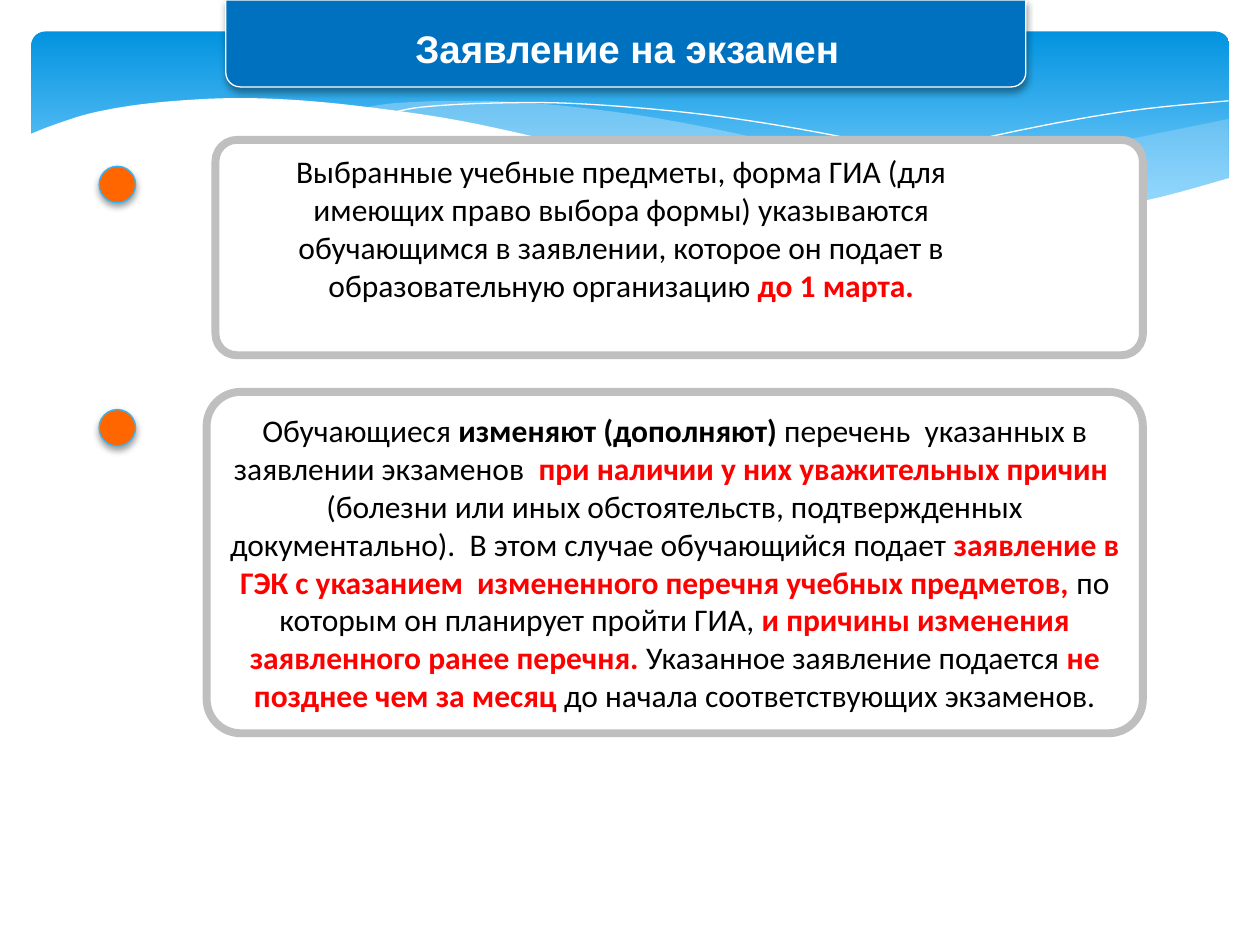
from dataclasses import dataclass

from lxml import etree
from pptx import Presentation
from pptx.dml.color import RGBColor
from pptx.enum import shapes as sh, text as tx
from pptx.oxml import ns
from pptx.util import Pt

WHITE = RGBColor(0xFF, 0xFF, 0xFF)
BLACK = RGBColor(0, 0, 0)
RED = RGBColor(0xFF, 0, 0)
GREY = RGBColor(0xBF, 0xBF, 0xBF)
BLUE = RGBColor(0x00, 0x71, 0xBF)
DEEP = RGBColor(0x02, 0x93, 0xE0)
LIGHT = RGBColor(0x83, 0xD3, 0xFE)
MIST = RGBColor(0xC6, 0xE7, 0xFC)
SKY = RGBColor(0x31, 0xB6, 0xFD)
ORANGE = RGBColor(0xFF, 0x66, 0x00)
KIND = sh.MSO_SHAPE
STEPS = 6


@dataclass
class Box:
    kind: int
    left: float
    top: float
    width: float
    height: float
    fill: RGBColor
    edge: RGBColor | None = None
    weight: float = 0
    round: float | None = None
    shade: bool = False


@dataclass
class Wave:
    curves: list
    fill: RGBColor | None = None
    alpha: int = 100


@dataclass
class Part:
    words: str
    color: RGBColor = BLACK
    bold: bool = False


def add_node(parent, tag: str, **attrs):
    return etree.SubElement(parent, ns.qn(tag), attrs)


def add_shade(shape) -> None:
    effects = shape._element.spPr.find(ns.qn("a:effectLst"))
    outer = add_node(effects, "a:outerShdw", blurRad=str(Pt(4)), dist=str(Pt(2)),
                     dir="5400000", rotWithShape="0")
    add_node(add_node(outer, "a:srgbClr", val=str(BLACK)), "a:alpha", val="38000")


def add_box(slide, box: Box):
    shape = slide.shapes.add_shape(box.kind, Pt(box.left), Pt(box.top),
                                   Pt(box.width), Pt(box.height))
    shape.shadow.inherit = False
    shape.fill.solid()
    shape.fill.fore_color.rgb = box.fill
    if box.edge is None:
        shape.line.fill.background()
    else:
        shape.line.color.rgb = box.edge
        shape.line.width = Pt(box.weight)
    if box.round is not None:
        shape.adjustments[0] = box.round
    if box.shade:
        add_shade(shape)
    return shape


def smooth(knots: list) -> list:
    ends = [knots[0], *knots, knots[-1]]
    dots = []
    for a, b, c, d in zip(ends, ends[1:], ends[2:], ends[3:]):
        for step in range(STEPS):
            t = step / STEPS
            dots.append(tuple(Pt(0.5 * (2 * q + (r - p) * t
                                        + (2 * p - 5 * q + 4 * r - s) * t ** 2
                                        + (3 * q - p - 3 * r + s) * t ** 3))
                              for p, q, r, s in zip(a, b, c, d)))
    return dots + [tuple(Pt(v) for v in knots[-1])]


def add_wave(slide, wave: Wave) -> None:
    dots = [dot for curve in wave.curves for dot in smooth(curve)]
    form = slide.shapes.build_freeform(*dots[0])
    form.add_line_segments(dots[1:], close=wave.fill is not None)
    shape = form.convert_to_shape()
    shape.shadow.inherit = False
    if wave.fill is None:
        shape.fill.background()
        shape.line.color.rgb = WHITE
        shape.line.width = Pt(0)
        return
    shape.line.fill.background()
    shape.fill.solid()
    shape.fill.fore_color.rgb = wave.fill
    if wave.alpha < 100:
        tint = shape._element.spPr.find(ns.qn("a:solidFill"))[0]
        add_node(tint, "a:alpha", val=str(wave.alpha * 1000))


def add_words(shape, parts: list[Part], size: float, face: str) -> None:
    frame = shape.text_frame
    frame.word_wrap = True
    para = frame.paragraphs[0]
    para.alignment = tx.PP_ALIGN.CENTER
    for part in parts:
        run = para.add_run()
        run.text = part.words
        run.font.color.rgb = part.color
        for key, val in {"size": Pt(size), "name": face, "bold": part.bold}.items():
            setattr(run.font, key, val)


def add_label(slide, left: float, top: float, width: float, height: float,
              parts: list[Part], size: float, face: str) -> None:
    label = slide.shapes.add_textbox(Pt(left), Pt(top), Pt(width), Pt(height))
    add_words(label, parts, size, face)


WAVES = [
    Wave([[(702, 68), (658, 77), (620, 85), (561, 98.6), (476, 115)],
          [(476, 115), (527, 120), (571, 123.5), (616, 123), (657, 116), (702, 102)]],
         MIST, 29),
    Wave([[(643, 120.2), (581, 111), (508, 96.5), (453, 83.5), (399, 71.8),
           (352, 64), (302, 58.7), (260, 57.6), (225, 59), (206, 62)],
          [(206, 62), (261, 70), (323, 83.5), (408, 103), (468, 114), (520, 121),
           (573, 124.4), (617, 123), (643, 120.2)]],
         MIST, 40),
    Wave([[(222.5, 64.8), (241, 61.2), (278, 59), (325, 59), (384, 63.4),
           (438, 70.5), (500, 82), (572, 98), (653, 119.5)]]),
    Wave([[(441, 108.7), (500, 93.6), (580, 75), (645, 63.4), (702, 57.6)]]),
    Wave([[(703.5, 101.5), (655, 114.5), (602, 122.4), (549, 123), (495, 118.8),
           (434, 107.3), (362, 92), (322, 82), (263, 69), (210, 61.2), (166, 57),
           (127, 56.2), (86, 59), (55, 64), (33, 70.6), (16.5, 77)],
          [(16.5, 161), (703.5, 161)]],
         WHITE),
]

CHOICE = [
    Part("Выбранные учебные предметы, форма ГИА (для имеющих право выбора формы) "
         "указываются обучающимся в заявлении, которое он подает в "
         "образовательную организацию "),
    Part("до 1 марта.", RED, True),
]

CHANGE = [
    Part("Обучающиеся "),
    Part("изменяют (дополняют) ", BLACK, True),
    Part("перечень  указанных в заявлении экзаменов  "),
    Part("при наличии у них уважительных причин", RED, True),
    Part("  (болезни или иных обстоятельств, подтвержденных документально).  "
         "В этом случае обучающийся подает "),
    Part("заявление в ГЭК с указанием  измененного перечня учебных предметов,",
         RED, True),
    Part(" по которым он планирует пройти ГИА, "),
    Part("и причины изменения заявленного ранее перечня. ", RED, True),
    Part("Указанное заявление подается "),
    Part("не позднее чем за месяц ", RED, True),
    Part("до начала соответствующих экзаменов."),
]


def main() -> None:
    deck = Presentation()
    deck.slide_width, deck.slide_height = Pt(720), Pt(540)
    slide = deck.slides.add_slide(deck.slide_layouts[6])

    band = add_box(slide, Box(KIND.ROUNDED_RECTANGLE, 18, 18, 684.5, 112.3, DEEP,
                              round=0.07))
    band.fill.gradient()
    band.fill.gradient_angle = 270
    for stop, color, place in zip(band.fill.gradient_stops, (DEEP, LIGHT), (0, 0.9)):
        stop.color.rgb = color
        stop.position = place
    for wave in WAVES:
        add_wave(slide, wave)

    add_box(slide, Box(KIND.ROUNDED_RECTANGLE, 123.1, 79.9, 530, 123.1,
                       WHITE, GREY, 4.5, 0.1))
    head = add_box(slide, Box(KIND.ROUND_2_SAME_RECTANGLE, 129, 0, 457.2, 49.7,
                              BLUE, WHITE, 0.75, shade=True))
    head._element.spPr.xfrm.set("flipV", "1")
    add_label(slide, 195, 10.8, 327, 33, [Part("Заявление на экзамен", WHITE, True)],
              22, "Arial")
    add_label(slide, 144, 83.5, 422, 94, CHOICE, 18, "Calibri")
    panel = add_box(slide, Box(KIND.ROUNDED_RECTANGLE, 118.1, 223.9, 535, 195.1,
                               WHITE, GREY, 4.5, 0.1))
    panel.text_frame.vertical_anchor = tx.MSO_ANCHOR.MIDDLE
    add_words(panel, CHANGE, 18, "Calibri")
    for top in (95, 234):
        add_box(slide, Box(KIND.OVAL, 56.6, top, 20.9, 20.9, ORANGE, SKY, 0.75,
                           shade=True))
    deck.save("out.pptx")


if __name__ == "__main__":
    main()
